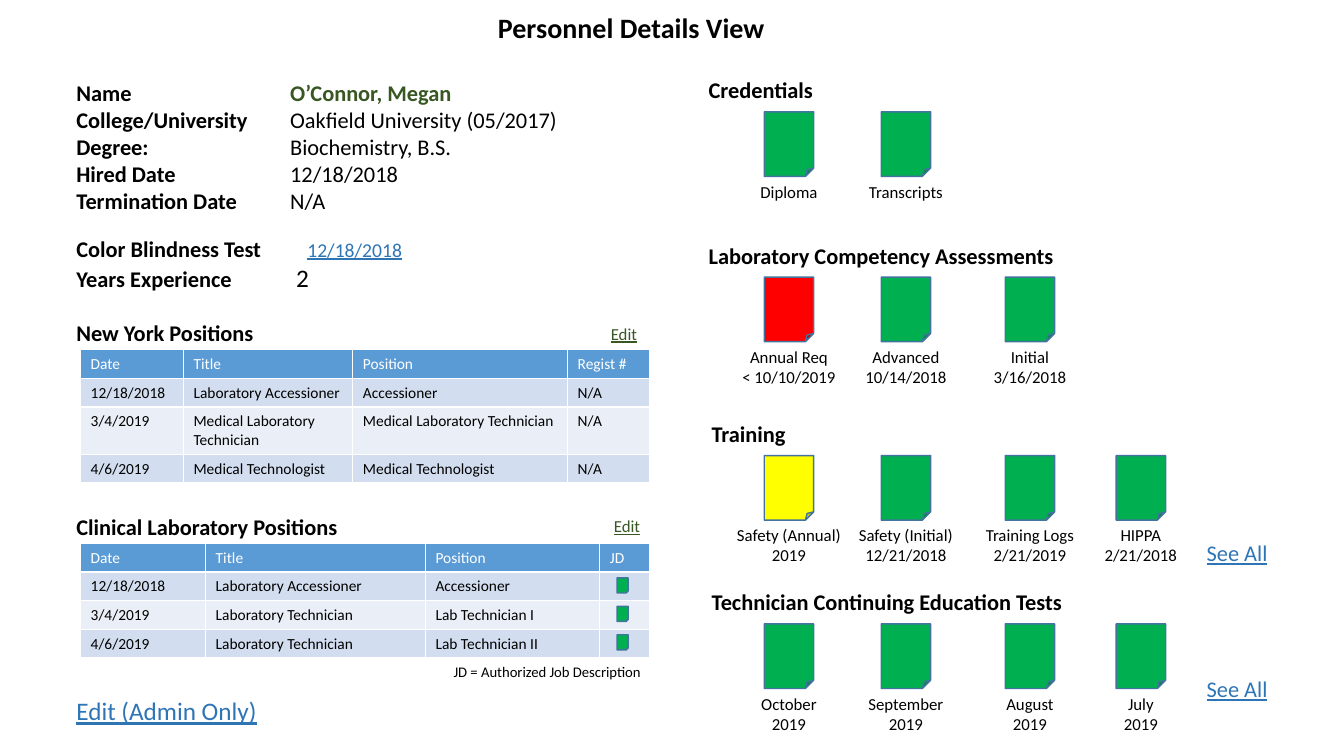
from lxml import etree
from pptx import Presentation
from pptx.dml.color import RGBColor
from pptx.enum.shapes import MSO_SHAPE
from pptx.enum.text import MSO_AUTO_SIZE, PP_ALIGN
from pptx.oxml.ns import qn
from pptx.util import Inches, Pt

FOLDED = MSO_SHAPE.FOLDED_CORNER
LEFT, CENTER = PP_ALIGN.LEFT, PP_ALIGN.CENTER
GROW = MSO_AUTO_SIZE.SHAPE_TO_FIT_TEXT
BLACK, WHITE = "000000", "FFFFFF"
GREEN, RED, YELLOW = "00B050", "FF0000", "FFFF00"
OUTLINE, LINK, DARK_GREEN = "43739E", "2E75B6", "385723"
HEADER, BANDS = "5B9BD5", ("D2DEEF", "EAEFF7")
DOCUMENT_LEFTS = (7.58, 8.74, 9.97, 11.07)
DOCUMENT_WIDTH, DOCUMENT_HEIGHT = 0.49, 0.64
ROW_HEIGHT = 0.28

PROFILE = [
    ("Name", "O’Connor, Megan", 2.12, 0, dict(bold=True, color=DARK_GREEN)),
    ("College/University", "Oakfield University (05/2017)", 2.12, 0, {}),
    ("Degree:", "Biochemistry, B.S.", 2.12, 0, {}),
    ("Hired Date", "12/18/2018", 2.12, 0, {}),
    ("Termination Date", "N/A", 2.12, 0, {}),
    ("Color Blindness Test", "12/18/2018", 2.29, 15,
     dict(size=14, color=LINK, underline=True)),
    ("Years Experience", "2", 2.18, 0.5, dict(size=18)),
]
NEW_YORK = [
    ("Date", "Title", "Position", "Regist #"),
    ("12/18/2018", "Laboratory Accessioner", "Accessioner", "N/A"),
    ("3/4/2019", "Medical Laboratory Technician",
     "Medical Laboratory Technician", "N/A"),
    ("4/6/2019", "Medical Technologist", "Medical Technologist", "N/A"),
]
CLINICAL = [
    ("Date", "Title", "Position", "JD"),
    ("12/18/2018", "Laboratory Accessioner", "Accessioner", ""),
    ("3/4/2019", "Laboratory Technician", "Lab Technician I", ""),
    ("4/6/2019", "Laboratory Technician", "Lab Technician II", ""),
]
DOCUMENT_GROUPS = [
    ("Credentials", 6.93, 0.71, 1.25, [
        (GREEN, 0.78, ["Diploma"]),
        (GREEN, 0.94, ["Transcripts"])]),
    ("Laboratory Competency Assessments", 6.93, 2.35, 3.67, [
        (RED, 1.14, ["Annual Req", "< 10/10/2019"]),
        (GREEN, 1.02, ["Advanced", "10/14/2018"]),
        (GREEN, 0.93, ["Initial", "3/16/2018"])]),
    ("Training", 6.96, 4.12, 0.94, [
        (YELLOW, 1.24, ["Safety (Annual)", "2019"]),
        (GREEN, 1.14, ["Safety (Initial)", "12/21/2018"]),
        (GREEN, 1.08, ["Training Logs", "2/21/2019"]),
        (GREEN, 0.93, ["HIPPA", "2/21/2018"])]),
    ("Technician Continuing Education Tests", 6.96, 5.79, 3.72, [
        (GREEN, 0.8, ["October", "2019"]),
        (GREEN, 0.95, ["September", "2019"]),
        (GREEN, 0.68, ["August", "2019"]),
        (GREEN, 0.55, ["July", "2019"])]),
]


def rgb(color):
    return RGBColor.from_string(color)


def set_font(font, size, color=BLACK, bold=False, underline=False):
    font.name = "Calibri"
    font.size = Pt(size)
    font.bold = bold
    font.underline = underline
    font.color.rgb = rgb(color)


def add_text(page, box, lines, size, align=LEFT, **style):
    text_box = page.shapes.add_textbox(*map(Inches, box))
    frame = text_box.text_frame
    frame.word_wrap = False
    frame.auto_size = GROW
    for index, line in enumerate(lines):
        para = frame.add_paragraph() if index else frame.paragraphs[0]
        para.text = line
        para.alignment = align
        set_font(para.font, size, **style)


def add_document(page, box, color):
    document = page.shapes.add_shape(FOLDED, *map(Inches, box))
    document.shadow.inherit = False
    document.fill.solid()
    document.fill.fore_color.rgb = rgb(color)
    document.line.color.rgb = rgb(OUTLINE)
    document.line.width = Pt(1)


def add_profile(page, box):
    frame = page.shapes.add_textbox(*map(Inches, box)).text_frame
    frame.word_wrap = True
    frame.auto_size = GROW
    for index, (label, value, tab, gap, style) in enumerate(PROFILE):
        para = frame.add_paragraph() if index else frame.paragraphs[0]
        para.space_before = Pt(gap)
        tabs = etree.SubElement(para._p.get_or_add_pPr(), qn("a:tabLst"))
        etree.SubElement(tabs, qn("a:tab"), pos=str(Inches(tab)), algn="l")
        set_font(para.font, 16, bold=True)
        para.add_run().text = label + "\t"
        span = para.add_run()
        span.text = value
        set_font(span.font, **{"size": 16, **style})


def add_borders(cell):
    properties = cell._tc.get_or_add_tcPr()
    for side in "LRTB":
        line = etree.SubElement(properties, qn("a:ln" + side), w=str(Pt(1)))
        fill = etree.SubElement(line, qn("a:solidFill"))
        etree.SubElement(fill, qn("a:srgbClr"), val=WHITE)


def add_table(page, box, rows, widths, heights):
    table = page.shapes.add_table(
        len(rows), len(widths), *map(Inches, box)).table
    table.first_row = False
    table.horz_banding = False
    for column, width in zip(table.columns, widths):
        column.width = Inches(width)
    for row_index, values in enumerate(rows):
        table.rows[row_index].height = Inches(heights[row_index])
        is_header = row_index == 0
        for column_index, value in enumerate(values):
            cell = table.cell(row_index, column_index)
            add_borders(cell)
            cell.fill.solid()
            cell.fill.fore_color.rgb = rgb(
                HEADER if is_header else BANDS[(row_index - 1) % 2])
            para = cell.text_frame.paragraphs[0]
            set_font(para.font, 11, WHITE if is_header else BLACK)
            if value:
                para.text = value
            else:
                etree.SubElement(para._p, qn("a:endParaRPr"), sz="1100")


def add_positions(page, box, title, title_width, edit, rows, widths, heights):
    left, top, width, height = box
    add_text(page, (left - 0.14, top - 0.35, title_width, 0.37), [title], 16,
             bold=True)
    add_text(page, (*edit, 0.46, 0.3), ["Edit"], 12,
             color=DARK_GREEN, underline=True)
    add_table(page, box, rows, widths, heights)


def add_job_descriptions(page, box):
    left, top, width, height = box
    for row in range(1, len(CLINICAL)):
        add_document(page, (left + width - 0.32,
                            top + row * height / len(CLINICAL) + 0.06,
                            0.11, 0.15), GREEN)
    add_text(page, (left + 3.6, top + height + 0.01, 2.09, 0.28),
             ["JD = Authorized Job Description"], 10.5)


def add_document_group(page, title, left, top, width, documents):
    add_text(page, (left, top, width, 0.37), [title], 16, bold=True)
    icon_top = top + 0.4
    for icon_left, (color, caption_width, caption) in zip(
            DOCUMENT_LEFTS, documents):
        add_document(page, (icon_left, icon_top, DOCUMENT_WIDTH,
                            DOCUMENT_HEIGHT), color)
        caption_left = icon_left + (DOCUMENT_WIDTH - caption_width) / 2
        add_text(page, (caption_left, icon_top + DOCUMENT_HEIGHT,
                        caption_width, 0.1 + 0.2 * len(caption)),
                 caption, 12, CENTER)


def main():
    deck = Presentation()
    deck.slide_width, deck.slide_height = Inches(13.33), Inches(7.5)
    page = deck.slides.add_slide(deck.slide_layouts[6])
    add_text(page, (4.84, 0.06, 2.87, 0.44), ["Personnel Details View"], 20,
             bold=True)
    add_profile(page, (0.66, 0.74, 5.04, 2.25))
    add_positions(page, (0.8, 3.47, 5.64, 1.31), "New York Positions", 2.4,
                  (5.96, 3.16), NEW_YORK, (1.02, 1.68, 2.13, 0.81),
                  (ROW_HEIGHT, ROW_HEIGHT, 0.47, ROW_HEIGHT))
    clinical_box = (0.8, 5.39, 5.64, 1.13)
    add_positions(page, clinical_box, "Clinical Laboratory Positions", 3.4,
                  (5.99, 5.07), CLINICAL, (1.24, 2.18, 1.73, 0.49),
                  [ROW_HEIGHT] * len(CLINICAL))
    add_job_descriptions(page, clinical_box)
    for group in DOCUMENT_GROUPS:
        add_document_group(page, *group)
    for top in (5.3, 6.65):
        add_text(page, (11.87, top, 0.81, 0.37), ["See All"], 16,
                 color=LINK, underline=True)
    add_text(page, (0.66, 6.85, 2.01, 0.4), ["Edit (Admin Only)"], 18,
             color=LINK, underline=True)
    deck.save("out.pptx")


if __name__ == "__main__":
    main()
